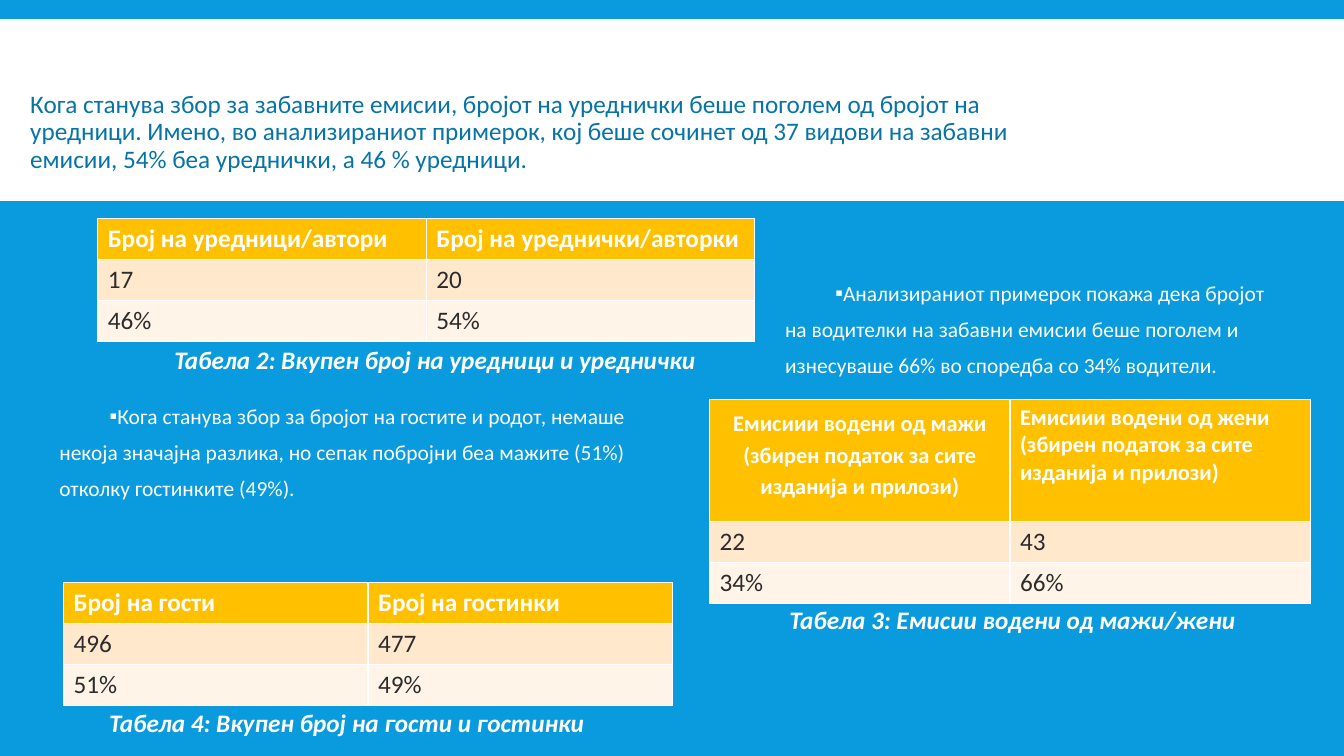
from dataclasses import dataclass

from lxml.etree import SubElement
from pptx import Presentation
from pptx.dml.color import RGBColor
from pptx.enum.shapes import MSO_SHAPE
from pptx.enum.text import MSO_ANCHOR, MSO_AUTO_SIZE, PP_ALIGN
from pptx.oxml.ns import qn
from pptx.util import Pt


@dataclass(frozen=True)
class Theme:
    font: str = "Calibri"
    blue: RGBColor = RGBColor(0x09, 0x9B, 0xDD)
    lead: RGBColor = RGBColor(0x07, 0x74, 0xA6)
    white: RGBColor = RGBColor(0xFF, 0xFF, 0xFF)
    dark: RGBColor = RGBColor(0x2C, 0x2C, 0x2C)
    header: RGBColor = RGBColor(0xFF, 0xC0, 0x00)
    rows: tuple = (RGBColor(0xFF, 0xE8, 0xCC), RGBColor(0xFF, 0xF4, 0xE7))
    large: float = 18
    medium: float = 16
    small: float = 15.3


theme = Theme()


def write(paragraph, text, size, color, bold=False, italic=False):
    paragraph.text = text
    font = paragraph.font
    font.name, font.size, font.color.rgb = theme.font, Pt(size), color
    font.bold, font.italic = bold, italic


def add_bullet(paragraph, first_indent):
    """Give the paragraph a white square bullet and its indents."""
    properties = paragraph._p.get_or_add_pPr()
    properties.set("marL", str(Pt(14.4)))
    properties.set("indent", str(Pt(first_indent)))
    bullet_color = SubElement(properties, qn("a:buClr"))
    SubElement(bullet_color, qn("a:srgbClr"), val=str(theme.white))
    SubElement(properties, qn("a:buFont"), typeface=theme.font)
    SubElement(properties, qn("a:buChar"), char="▪")


presentation = Presentation()
presentation.slide_width, presentation.slide_height = Pt(960), Pt(540)
slide = presentation.slides.add_slide(presentation.slide_layouts[1])
slide.background.fill.solid()
slide.background.fill.fore_color.rgb = theme.blue
title = slide.shapes.title
title.element.getparent().remove(title.element)

# Lead text on the white band
lead = slide.placeholders[1]
lead.left, lead.top, lead.width, lead.height = Pt(0), Pt(62), Pt(770.4), Pt(85.7)
lead.text_frame.auto_size = MSO_AUTO_SIZE.NONE
lead.text_frame.vertical_anchor = MSO_ANCHOR.TOP
paragraph = lead.text_frame.paragraphs[0]
add_bullet(paragraph, -14.4)
write(
    paragraph,
    "Кога станува збор за забавните емисии, бројот на уреднички беше поголем од "
    "бројот на уредници. Имено, во анализираниот примерок, кој беше сочинет од "
    "37 видови на забавни емисии, 54% беа уреднички, а 46 % уредници.",
    theme.large, theme.lead,
)
paragraph.line_spacing = 0.9
paragraph.space_before, paragraph.space_after = Pt(12), Pt(2)

band = slide.shapes.add_shape(MSO_SHAPE.RECTANGLE, Pt(0), Pt(13.7), Pt(960), Pt(129.8))
band.shadow.inherit = False
band.fill.solid()
band.fill.fore_color.rgb = theme.white
band.line.fill.background()
lead.element.addprevious(band.element)

# Commentary
comments = [
    (20.9, 277.2, 432.7, 85.7, PP_ALIGN.JUSTIFY,
     "Кога станува збор за бројот на гостите и родот, немаше некоја значајна разлика, "
     "но сепак побројни беа мажите (51%) отколку гостинките (49%)."),
    (539.3, 189.4, 386.6, 87.8, PP_ALIGN.LEFT,
     "Анализираниот примерок покажа дека бројот на водителки на забавни емисии беше "
     "поголем и изнесуваше 66% во споредба со 34% водители."),
]
for left, top, width, height, alignment, text in comments:
    frame = slide.shapes.add_textbox(Pt(left), Pt(top), Pt(width), Pt(height)).text_frame
    frame.word_wrap = True
    paragraph = frame.paragraphs[0]
    add_bullet(paragraph, 36)
    write(paragraph, text, theme.small, theme.white)
    paragraph.alignment = alignment
    paragraph.line_spacing = 1.4
    paragraph.space_before, paragraph.space_after = Pt(12), Pt(7.9)

# Tables: left, top, width, header height, header size, rows
row_height = 29.2
tables = [
    (69.8, 156.2, 469.4, row_height, theme.large,
     [("Број на уредници/автори", "Број на уреднички/авторки"), ("17", "20"), ("46%", "54%")]),
    (506.9, 285.1, 429.1, 87.6, theme.medium,
     [("Емисиии водени од мажи (збирен податок за сите изданија и прилози)",
       "Емисиии водени од жени (збирен податок за сите изданија и прилози)"),
      ("22", "43"), ("34%", "66%")]),
    (45.4, 416.2, 434.9, row_height, theme.large,
     [("Број на гости", "Број на гостинки"), ("496", "477"), ("51%", "49%")]),
]
grids = []
for left, top, width, header_height, header_size, rows in tables:
    height = header_height + 2 * row_height
    grid = slide.shapes.add_table(
        3, 2, Pt(left), Pt(top), Pt(width), Pt(height)).table
    grids.append(grid)
    for row_index, values in enumerate(rows):
        is_header = row_index == 0
        grid.rows[row_index].height = Pt(header_height if is_header else row_height)
        for column_index, value in enumerate(values):
            cell = grid.cell(row_index, column_index)
            cell.fill.solid()
            cell.fill.fore_color.rgb = theme.header if is_header else theme.rows[row_index - 1]
            write(cell.text_frame.paragraphs[0], value,
                  header_size if is_header else theme.large,
                  theme.white if is_header else theme.dark, bold=is_header)

men_header = grids[1].cell(0, 0)
men_header.margin_left = men_header.margin_right = Pt(5.4)
men_header.margin_top = men_header.margin_bottom = Pt(5)
paragraph = men_header.text_frame.paragraphs[0]
paragraph.alignment = PP_ALIGN.CENTER
paragraph.line_spacing = 1.15
paragraph.space_after = Pt(7.2)

# Captions
captions = [
    (69.8, 240.5, 481.7, "Табела 2: Вкупен број на уредници и уреднички"),
    (482.4, 426.2, 481.7, "Табела 3: Емисии водени од мажи/жени"),
    (5.8, 499.7, 483.8, "Табела 4: Вкупен број на гости и гостинки"),
]
for left, top, width, text in captions:
    frame = slide.shapes.add_textbox(Pt(left), Pt(top), Pt(width), Pt(29.5)).text_frame
    frame.word_wrap = True
    frame.auto_size = MSO_AUTO_SIZE.SHAPE_TO_FIT_TEXT
    paragraph = frame.paragraphs[0]
    write(paragraph, text, theme.large, theme.white, bold=True, italic=True)
    paragraph.alignment = PP_ALIGN.CENTER
    paragraph.line_spacing = 1.08
    paragraph.space_after = Pt(7.9)

presentation.save("out.pptx")
